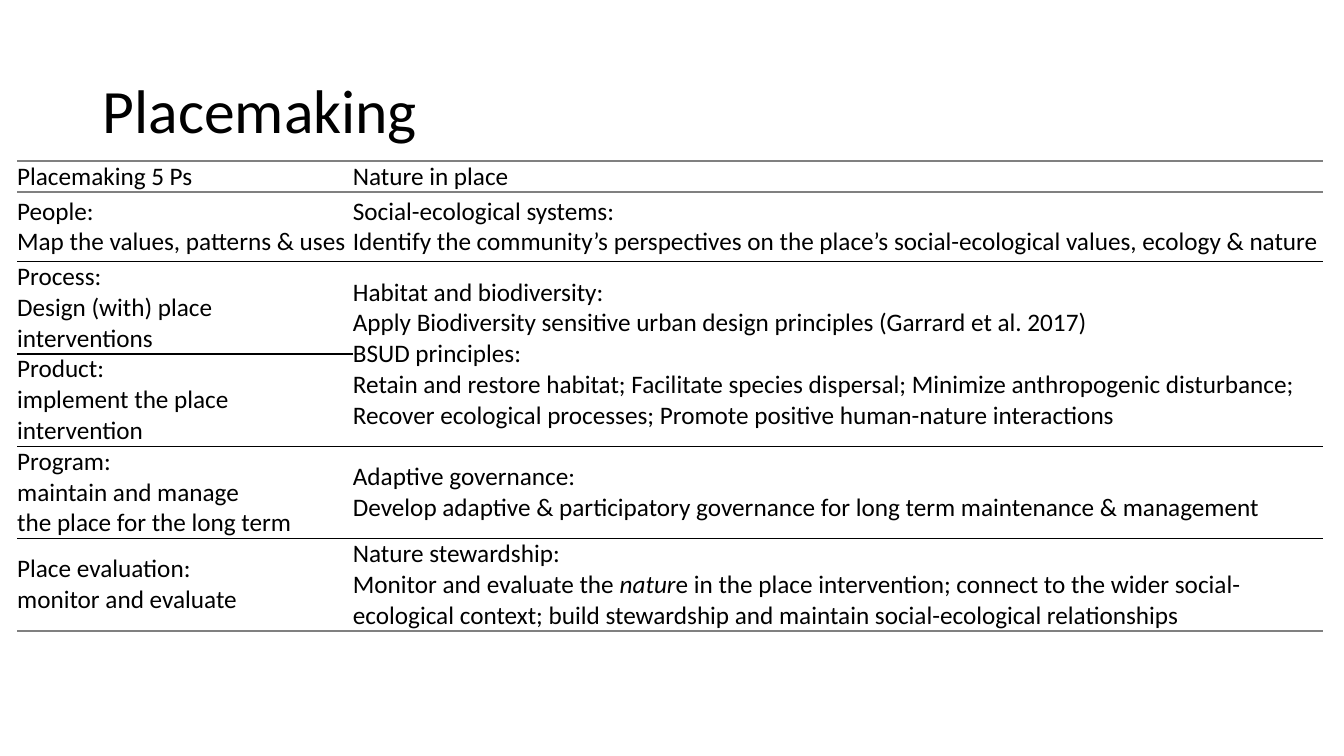
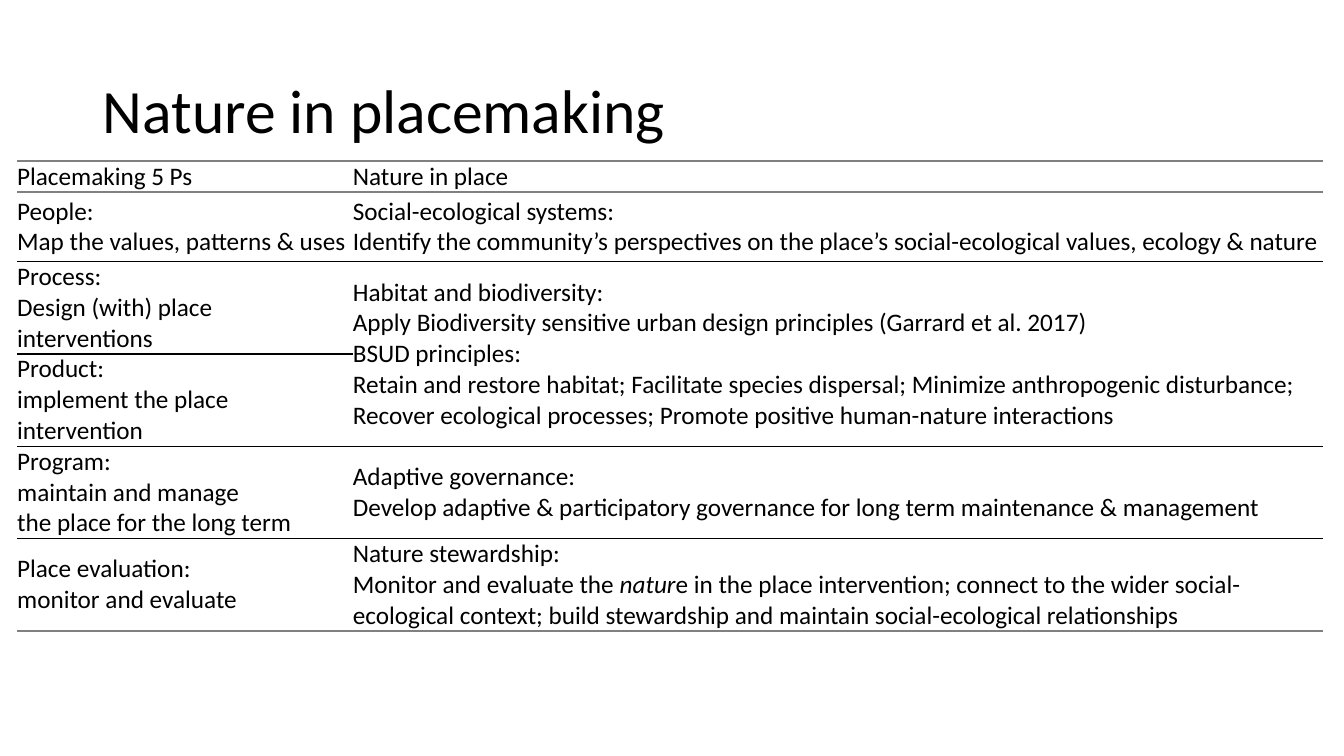
from lxml.etree import SubElement
from pptx import Presentation
from pptx.dml.color import RGBColor
from pptx.enum.text import MSO_ANCHOR, MSO_AUTO_SIZE, PP_ALIGN
from pptx.oxml.ns import qn
from pptx.util import Inches, Pt

# Shared style and content
FONT, BLACK, GREY = "Calibri", "000000", "808080"
TITLES = ["Placemaking", "Nature in placemaking"]
COLS = [3.33, 9.62]
ROWS = [0.22, 0.69, 0.75, 0.68, 0.69, 0.73]
# Rules above each row, then the one below the last row
RULES = [(GREY, 1.5), (GREY, 1), (BLACK, 1), (BLACK, 1), (BLACK, 1), (BLACK, 1), (GREY, 1.5)]

# A cell is a list of paragraphs; *stars* mark italics, None is merged upwards
CELLS = [
    [["Placemaking 5 Ps"], ["Nature in place"]],
    [["People:", "Map the values, patterns & uses"],
     ["Social-ecological systems:",
      "Identify the community’s perspectives on the place’s social-ecological values, "
      "ecology & nature"]],
    [["Process:", "Design (with) place\ninterventions"],
     ["Habitat and biodiversity:",
      "Apply Biodiversity sensitive urban design principles (Garrard et al. 2017)",
      "BSUD principles:",
      "Retain and restore habitat; Facilitate species dispersal; Minimize anthropogenic "
      "disturbance; Recover ecological processes; Promote positive human-nature interactions"]],
    [["Product:", "implement the place intervention"], None],
    [["Program:", "maintain and manage\nthe place for the long term"],
     ["Adaptive governance:",
      "Develop adaptive & participatory governance for long term maintenance & management"]],
    [["Place evaluation:", "monitor and evaluate"],
     ["Nature stewardship:",
      "Monitor and evaluate the *natur*e in the place intervention; connect to the wider "
      "social-ecological context; build stewardship and maintain social-ecological "
      "relationships"]],
]


def add_text(p, text, size):
    for i, part in enumerate(text.split("*")):
        for j, line in enumerate(part.split("\n")):
            if j:
                p.add_line_break()
            r = p.add_run()
            r.text = line
            r.font.name, r.font.size = FONT, Pt(size)
            r.font.bold, r.font.italic = False, i % 2 == 1
            r.font.color.rgb = RGBColor.from_string(BLACK)


def set_border(cell, side, rule=None):
    ln = SubElement(cell._tc.get_or_add_tcPr(), qn("a:ln" + side))
    if rule is None:
        ln.set("w", "0")
        SubElement(ln, qn("a:noFill"))
        return
    color, width = rule
    ln.set("w", str(Pt(width)))
    fill = SubElement(ln, qn("a:solidFill"))
    SubElement(fill, qn("a:srgbClr")).set("val", color)


prs = Presentation()
prs.slide_width, prs.slide_height = Inches(13.33), Inches(7.5)

for title in TITLES:
    s = prs.slides.add_slide(prs.slide_layouts[5])

    # Title
    sp = s.shapes.title
    sp.left, sp.top, sp.width, sp.height = Inches(0.92), Inches(0.4), Inches(11.5), Inches(1.45)
    tf = sp.text_frame
    tf.auto_size = MSO_AUTO_SIZE.NONE
    tf.vertical_anchor = MSO_ANCHOR.MIDDLE
    p = tf.paragraphs[0]
    p.alignment, p.line_spacing = PP_ALIGN.LEFT, 0.9
    add_text(p, title, 44)

    # Table grid
    table = s.shapes.add_table(len(ROWS), len(COLS), Inches(0.17), Inches(1.6),
                               Inches(sum(COLS)), Inches(sum(ROWS))).table
    table.first_row = table.horz_banding = False
    for col, width in zip(table.columns, COLS):
        col.width = Inches(width)
    for row, height in zip(table.rows, ROWS):
        row.height = Inches(height)
    table.cell(2, 1).merge(table.cell(3, 1))

    # Cell text, rules and fill
    for i, row in enumerate(CELLS):
        for j, paragraphs in enumerate(row):
            cell = table.cell(i, j)
            cell.margin_left = cell.margin_right = cell.margin_top = cell.margin_bottom = 0
            cell.vertical_anchor = MSO_ANCHOR.MIDDLE
            merged_below = i + 1 < len(CELLS) and CELLS[i + 1][j] is None
            set_border(cell, "L")
            set_border(cell, "R")
            set_border(cell, "T", None if paragraphs is None else RULES[i])
            # A merged cell takes its lower rule from the last row it covers
            set_border(cell, "B", RULES[i + 2 if merged_below else i + 1])
            cell.fill.background()
            tf = cell.text_frame
            for k, text in enumerate(paragraphs or []):
                p = tf.add_paragraph() if k else tf.paragraphs[0]
                add_text(p, text, 18)

prs.save("out.pptx")
